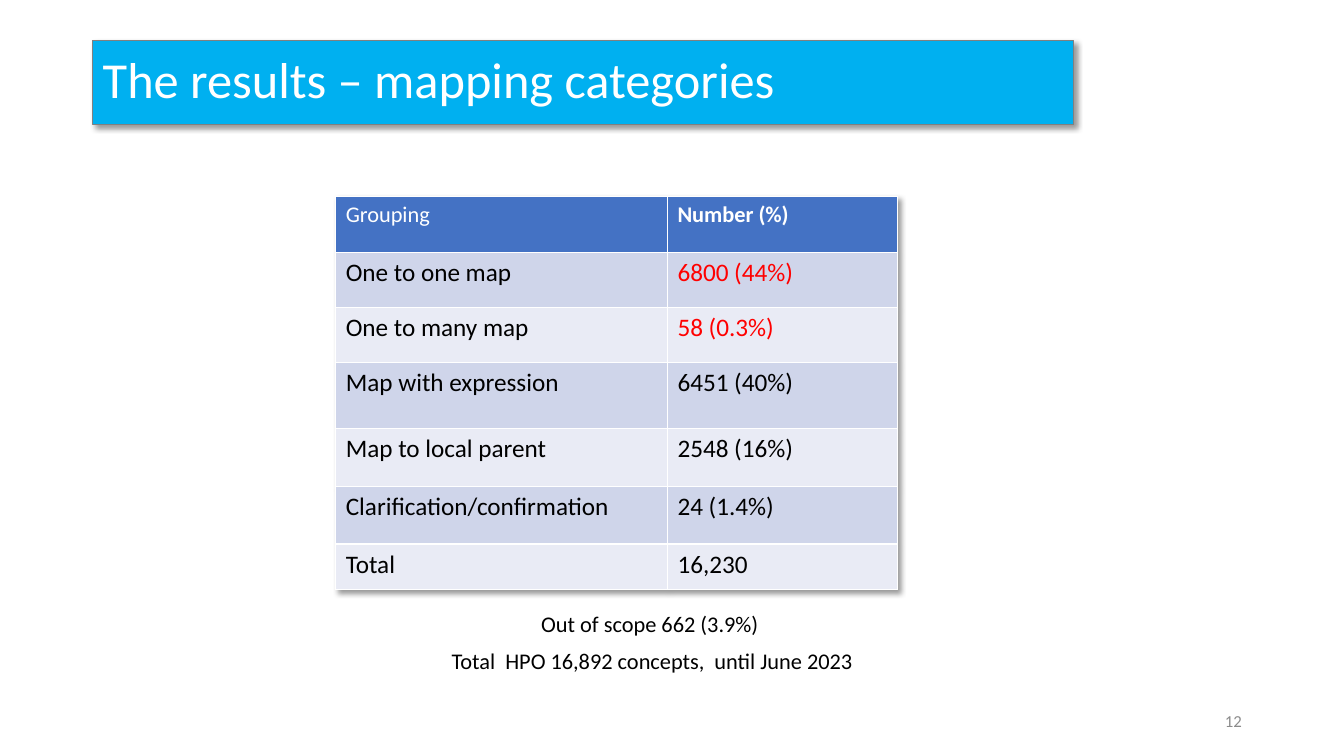
from dataclasses import dataclass

from pptx import Presentation
from pptx.dml.color import RGBColor
from pptx.enum.shapes import MSO_SHAPE
from pptx.enum.text import MSO_ANCHOR, MSO_AUTO_SIZE, PP_ALIGN
from pptx.oxml import parse_xml
from pptx.oxml.ns import nsdecls
from pptx.oxml.xmlchemy import BaseOxmlElement
from pptx.slide import Slide
from pptx.text.text import TextFrame
from pptx.util import Cm, Pt


@dataclass(frozen=True)
class Theme:
    font: str = "Calibri"
    white: str = "FFFFFF"
    black: str = "000000"
    red: str = "FF0000"
    gray: str = "8C8C8C"
    edge: str = "808080"
    banner: str = "00B0F0"
    header: str = "4472C4"
    bands: tuple[str, str] = ("CFD5EA", "E9EBF5")
    title: int = 36
    body: int = 18
    note: int = 16
    small: int = 12


@dataclass(frozen=True)
class Row:
    group: str
    count: str
    height: float
    color: str


@dataclass(frozen=True)
class Note:
    text: str
    box: tuple[float, float, float, float]
    size: int
    color: str
    wrap: bool = True
    grow: bool = True
    align: PP_ALIGN = PP_ALIGN.LEFT
    anchor: MSO_ANCHOR = MSO_ANCHOR.TOP


THEME = Theme()

ROWS = [
    Row("Grouping", "Number (%)", 1.42, THEME.white),
    Row("One to one map", "6800 (44%)", 1.37, THEME.red),
    Row("One to many map", "58 (0.3%)", 1.4, THEME.red),
    Row("Map with expression", "6451 (40%)", 1.65, THEME.black),
    Row("Map to local parent", "2548 (16%)", 1.47, THEME.black),
    Row("Clarification/confirmation", "24 (1.4%)", 1.45, THEME.black),
    Row("Total", "16,230", 1.14, THEME.black),
]
WIDTHS = (8.36, 5.79)

NOTES = [
    Note("Out of scope 662 (3.9%)", (13.39, 15.24, 6.07, 0.94),
         THEME.note, THEME.black, wrap=False),
    Note("Total  HPO 16,892 concepts,  until June 2023", (11.13, 16.18, 14.48, 0.94),
         THEME.note, THEME.black),
    Note("12", (23.93, 17.65, 7.62, 1.02), THEME.small, THEME.gray,
         grow=False, align=PP_ALIGN.RIGHT, anchor=MSO_ANCHOR.MIDDLE),
]


def write(frame: TextFrame, text: str, size: int, color: str, bold: bool = False) -> None:
    frame.text = text
    font = frame.paragraphs[0].runs[0].font
    font.name = THEME.font
    font.size = Pt(size)
    font.bold = bold
    font.color.rgb = RGBColor.from_string(color)


def make_shadow() -> BaseOxmlElement:
    return parse_xml(
        f'<a:effectLst {nsdecls("a")}>'
        f'<a:outerShdw blurRad="{Pt(4)}" dist="{Pt(3)}" dir="2700000" algn="tl" rotWithShape="0">'
        f'<a:srgbClr val="{THEME.black}"><a:alpha val="40000"/></a:srgbClr>'
        "</a:outerShdw></a:effectLst>"
    )


def add_title(slide: Slide, text: str) -> None:
    shape = slide.shapes.add_shape(
        MSO_SHAPE.RECTANGLE, Cm(2.34), Cm(1.02), Cm(24.71), Cm(2.11))
    shape.fill.solid()
    shape.fill.fore_color.rgb = RGBColor.from_string(THEME.banner)
    shape.line.color.rgb = RGBColor.from_string(THEME.edge)
    shape.line.width = Pt(0.75)
    shape.element.spPr.append(make_shadow())
    frame = shape.text_frame
    write(frame, text, THEME.title, THEME.white)
    frame.vertical_anchor = MSO_ANCHOR.MIDDLE
    frame.paragraphs[0].alignment = PP_ALIGN.LEFT
    frame.paragraphs[0].line_spacing = 0.9


def add_grid(slide: Slide, rows: list[Row]) -> None:
    height = sum(row.height for row in rows)
    table = slide.shapes.add_table(
        len(rows), len(WIDTHS), Cm(8.46), Cm(4.95), Cm(sum(WIDTHS)), Cm(height)).table
    table._tbl.tblPr.insert(0, make_shadow())
    for column, width in zip(table.columns, WIDTHS):
        column.width = Cm(width)
    for i, row in enumerate(rows):
        table.rows[i].height = Cm(row.height)
        head = i == 0
        fill = THEME.header if head else THEME.bands[(i - 1) % 2]
        size = THEME.note if head else THEME.body
        label = THEME.white if head else THEME.black
        for j, (text, color) in enumerate([(row.group, label), (row.count, row.color)]):
            cell = table.cell(i, j)
            cell.fill.solid()
            cell.fill.fore_color.rgb = RGBColor.from_string(fill)
            write(cell.text_frame, text, size, color, bold=head and j == 1)


def add_note(slide: Slide, note: Note) -> None:
    frame = slide.shapes.add_textbox(*map(Cm, note.box)).text_frame
    write(frame, note.text, note.size, note.color)
    frame.word_wrap = note.wrap
    frame.auto_size = MSO_AUTO_SIZE.SHAPE_TO_FIT_TEXT if note.grow else MSO_AUTO_SIZE.NONE
    frame.vertical_anchor = note.anchor
    frame.paragraphs[0].alignment = note.align


def main() -> None:
    deck = Presentation()
    deck.slide_width, deck.slide_height = Cm(33.87), Cm(19.05)
    slide = deck.slides.add_slide(deck.slide_layouts[6])
    add_grid(slide, ROWS)
    add_title(slide, "The results – mapping categories")
    for note in NOTES:
        add_note(slide, note)
    deck.save("out.pptx")


if __name__ == "__main__":
    main()
